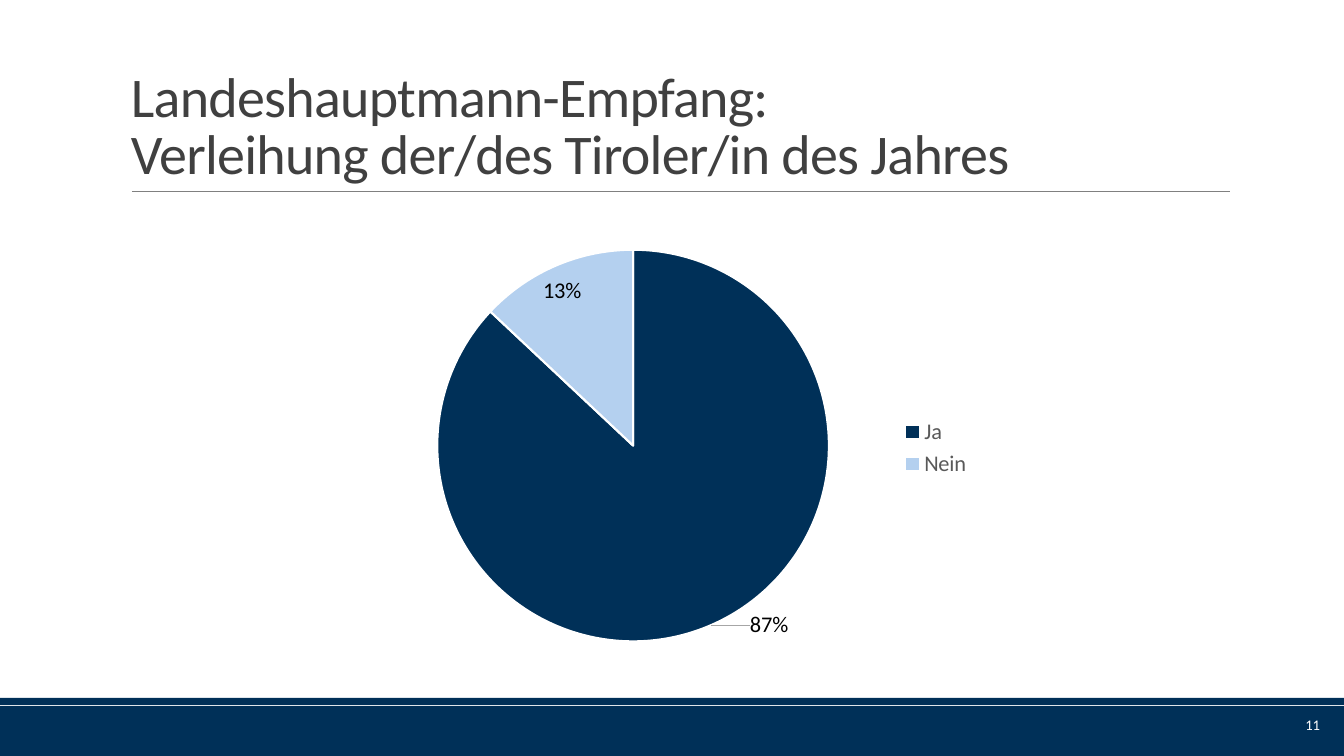
from lxml import etree
from pptx import Presentation
from pptx.chart.data import CategoryChartData
from pptx.dml.color import RGBColor
from pptx.enum.chart import XL_CHART_TYPE as CT, XL_LABEL_POSITION as LP, XL_LEGEND_POSITION as LEG
from pptx.enum.shapes import MSO_CONNECTOR as CONN, MSO_SHAPE as SHAPE
from pptx.enum.text import MSO_ANCHOR as ANCHOR, PP_ALIGN as ALIGN
from pptx.oxml import parse_xml
from pptx.oxml.ns import nsdecls, qn
from pptx.util import Pt

FONT, NAVY, LIGHT = "Calibri", "003058", "B4D0EF"


def px(*lengths):
    return [round(n * 914400 / 100.8) for n in lengths]


def style(font, size, color):
    font.name, font.size = FONT, Pt(size)
    font.color.rgb = RGBColor.from_string(color)


prs = Presentation()
prs.slide_width, prs.slide_height = px(1344, 756)
s = prs.slides.add_slide(prs.slide_layouts[6])

for top, height in ((706, 50), (698, 7)):
    band = s.shapes.add_shape(SHAPE.RECTANGLE, *px(0, top, 1344, height))
    band.shadow.inherit = False
    band.fill.solid()
    band.fill.fore_color.rgb = RGBColor.from_string(NAVY)
    band.line.fill.background()

rule = s.shapes.add_connector(CONN.STRAIGHT, *px(132, 191, 1230, 191))
rule.line.color.rgb = RGBColor.from_string("808080")
rule.line.width = Pt(0.5)
etree.SubElement(rule._element.spPr, qn("a:effectLst"))

title = "Landeshauptmann-Empfang:\vVerleihung der/des Tiroler/in des Jahres"
for text, box, size, color, anchor, align in (
    (title, (121, 31, 1109, 160), 40, "404040", ANCHOR.BOTTOM, ALIGN.LEFT),
    ("11", (1186, 705, 144, 40), 10.5, "FFFFFF", ANCHOR.MIDDLE, ALIGN.RIGHT),
):
    tf = s.shapes.add_textbox(*px(*box)).text_frame
    tf.word_wrap = True
    tf.vertical_anchor = anchor
    tf.text = text
    p = tf.paragraphs[0]
    p.alignment = align
    for r in p.runs:
        style(r.font, size, color)
        if text == title:
            p.line_spacing = 0.85
            r.font._element.set("spc", "-50")

data = CategoryChartData(number_format="0%")
data.categories = ["Ja", "Nein"]
data.add_series("Series 1", (0.87, 0.13))
chart = s.shapes.add_chart(CT.PIE, *px(370, 211, 612, 474), data).chart
style(chart.font, 10, "000000")
chart.has_title = False
chart.has_legend = True
chart.legend.position = LEG.RIGHT
chart.legend.include_in_layout = False
style(chart.legend.font, 16, "595959")

plot = chart.plots[0]
plot.vary_by_categories = True
pie = plot.series[0]
labels = pie.data_labels
labels.number_format = "0%"
labels.number_format_is_linked = False
labels.position = LP.BEST_FIT
labels.show_value = True
style(labels.font, 16, "000000")
labels._element.append(parse_xml(
    f'<c:leaderLines {nsdecls("c", "a")}><c:spPr><a:ln w="9525"><a:solidFill>'
    '<a:srgbClr val="A6A6A6"/></a:solidFill></a:ln></c:spPr></c:leaderLines>'))

for i, color in enumerate((NAVY, LIGHT)):
    point = pie.points[i]
    point.format.fill.solid()
    point.format.fill.fore_color.rgb = RGBColor.from_string(color)
    point.format.line.color.rgb = RGBColor.from_string("FFFFFF")
    point.format.line.width = Pt(1.5)

ja_label = pie.points[0].data_label
style(ja_label.font, 16, "000000")
ja_label.position = LP.BEST_FIT
labels._element.find(qn("c:dLbl")).insert(1, parse_xml(
    f'<c:layout {nsdecls("c")}><c:manualLayout><c:x val="0.06"/><c:y val="-0.04"/>'
    '</c:manualLayout></c:layout>'))

area = chart._chartSpace.chart.plotArea
for old in area.findall(qn("c:layout")):
    area.remove(old)
area.insert(0, parse_xml(
    f'<c:layout {nsdecls("c")}><c:manualLayout><c:layoutTarget val="inner"/>'
    '<c:xMode val="edge"/><c:yMode val="edge"/><c:x val="0.11"/><c:y val="0.08"/>'
    '<c:w val="0.64"/><c:h val="0.83"/></c:manualLayout></c:layout>'))

prs.save("out.pptx")
